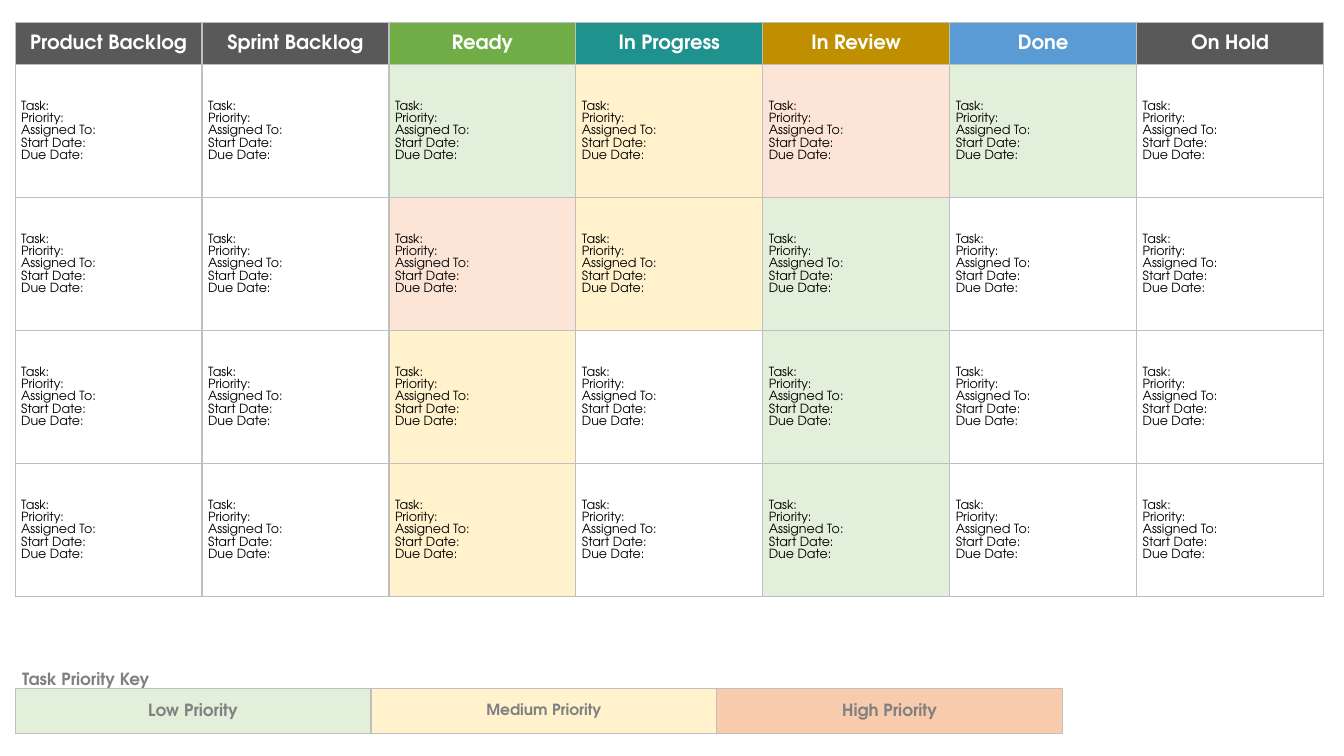
"""Build a kanban board slide with a task priority key."""
from copy import deepcopy
from dataclasses import dataclass

from lxml import etree
from pptx import Presentation
from pptx.dml.color import RGBColor
from pptx.enum.text import MSO_ANCHOR, PP_ALIGN
from pptx.oxml.ns import qn
from pptx.util import Inches, Pt

LEFT, CENTER = PP_ALIGN.LEFT, PP_ALIGN.CENTER
MIDDLE, BOTTOM = MSO_ANCHOR.MIDDLE, MSO_ANCHOR.BOTTOM
NO_STYLE = "{2D5ABB26-0587-4C30-8999-92F81FD0307C}"
ALL_SIDES = "LRTB"


@dataclass(frozen=True)
class Theme:
    font: str = "TeX Gyre Adventor"
    white: str = "FFFFFF"
    black: str = "000000"
    gray: str = "808080"
    border: str = "BFBFBF"
    slate: str = "595959"
    green: str = "70AD47"
    teal: str = "20928D"
    gold: str = "BF8F00"
    blue: str = "5B9BD5"
    low: str = "E2EFDA"
    medium: str = "FFF2CC"
    high: str = "FCE4D6"
    key_high: str = "F8CBAD"
    header_size: int = 14
    task_size: int = 9
    key_size: int = 12
    key_small_size: int = 11
    line_spacing: float = 1.07
    space_after: int = 8


T = Theme()

COLUMNS = [
    ("Product Backlog", T.slate, [None, None, None, None]),
    ("Sprint Backlog", T.slate, [None, None, None, None]),
    ("Ready", T.green, [T.low, T.high, T.medium, T.medium]),
    ("In Progress", T.teal, [T.medium, T.medium, None, None]),
    ("In Review", T.gold, [T.high, T.low, T.low, T.low]),
    ("Done", T.blue, [T.low, None, None, None]),
    ("On Hold", T.slate, [None, None, None, None]),
]
TASK = "Task:\nPriority:\nAssigned To:\nStart Date:\nDue Date:"
KEY_TITLE = "Task Priority Key"
KEY = [
    ("Low Priority", T.low, T.key_size),
    ("Medium Priority", T.medium, T.key_small_size),
    ("High Priority", T.key_high, T.key_size),
]

BOARD_LEFT, BOARD_TOP, BOARD_WIDTH = 0.15, 0.22, 12.98
BOARD_ROWS = [0.42] + [1.32] * 4
KEY_TOP = 6.45
KEY_COLS = [3.53, 3.43, 3.43]
KEY_ROWS = [0.38, 0.45]
BOARD_INSET, KEY_INSET = 0.06, 0.07


def add_grid(slide, left, top, widths, heights):
    frame = slide.shapes.add_table(
        len(heights), len(widths), Inches(left), Inches(top),
        Inches(sum(widths)), Inches(sum(heights)))
    table = frame.table
    table.first_row = table.horz_banding = False
    table._tbl.tblPr.find(qn("a:tableStyleId")).text = NO_STYLE
    for column, width in zip(table.columns, widths):
        column.width = Inches(width)
    for row, height in zip(table.rows, heights):
        row.height = Inches(height)
    return table


def format_cell(cell, fill, inset, sides=ALL_SIDES, anchor=MIDDLE):
    cell.margin_left = cell.margin_right = Inches(inset)
    cell.margin_top = cell.margin_bottom = 0
    cell.vertical_anchor = anchor
    tc_pr = cell._tc.get_or_add_tcPr()
    for side in sides:
        ln = etree.SubElement(tc_pr, qn(f"a:ln{side}"), w=str(Pt(1)))
        solid = etree.SubElement(ln, qn("a:solidFill"))
        etree.SubElement(solid, qn("a:srgbClr"), val=T.border)
    if fill:
        cell.fill.solid()
        cell.fill.fore_color.rgb = RGBColor.from_string(fill)
    else:
        cell.fill.background()


def write(cell, text, size, color, bold=True, align=CENTER):
    p = cell.text_frame.paragraphs[0]
    p.text = text
    p.alignment = align
    p.line_spacing = T.line_spacing
    p.space_after = Pt(T.space_after)
    for r in p.runs:
        r.font.name = T.font
        r.font.size = Pt(size)
        r.font.bold = bold
        r.font.color.rgb = RGBColor.from_string(color)
    for line_break in p._p.findall(qn("a:br")):
        line_break.insert(0, deepcopy(p.runs[0]._r.rPr))


def add_board(slide):
    widths = [BOARD_WIDTH / len(COLUMNS)] * len(COLUMNS)
    board = add_grid(slide, BOARD_LEFT, BOARD_TOP, widths, BOARD_ROWS)
    for col, (name, color, fills) in enumerate(COLUMNS):
        header = board.cell(0, col)
        format_cell(header, color, BOARD_INSET)
        write(header, name, T.header_size, T.white)
        for row, fill in enumerate(fills, 1):
            card = board.cell(row, col)
            format_cell(card, fill, BOARD_INSET)
            write(card, TASK, T.task_size, T.black, bold=False, align=LEFT)


def add_key(slide):
    key = add_grid(slide, BOARD_LEFT, KEY_TOP, KEY_COLS, KEY_ROWS)
    for col, (name, fill, size) in enumerate(KEY):
        format_cell(key.cell(0, col), None, KEY_INSET, "B", BOTTOM)
        format_cell(key.cell(1, col), fill, KEY_INSET)
        write(key.cell(1, col), name, size, T.gray)
    write(key.cell(0, 0), KEY_TITLE, T.key_size, T.gray, align=LEFT)


def main():
    prs = Presentation()
    prs.slide_width, prs.slide_height = Inches(13.33), Inches(7.5)
    s = prs.slides.add_slide(prs.slide_layouts[6])
    add_board(s)
    add_key(s)
    prs.save("out.pptx")


if __name__ == "__main__":
    main()
